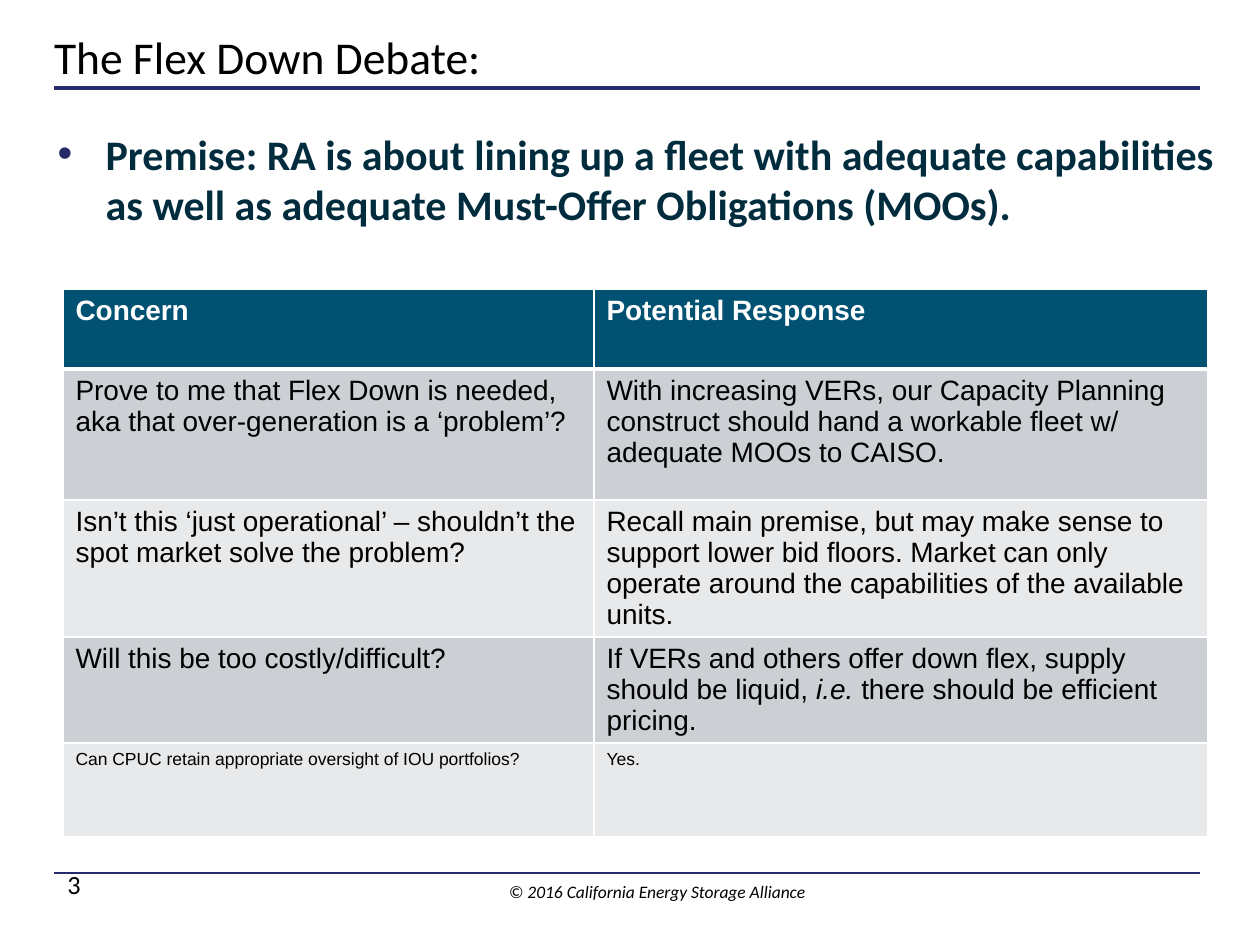
from lxml.etree import SubElement
from pptx import Presentation
from pptx.dml.color import RGBColor
from pptx.enum.shapes import MSO_CONNECTOR
from pptx.enum.text import MSO_ANCHOR, MSO_AUTO_SIZE, PP_ALIGN
from pptx.oxml.ns import qn
from pptx.util import Emu, Pt


def px(length):
    return Emu(round(length * 914400 / 126))


def add_run(paragraph, text, size, font, color, bold=False, italic=False):
    run = paragraph.add_run()
    run.text = text
    run.font.size = Pt(size)
    run.font.name = font
    run.font.bold = bold
    run.font.italic = italic
    run.font.color.rgb = RGBColor.from_string(color)


presentation = Presentation()
presentation.slide_width = px(1260)
presentation.slide_height = px(945)
slide = presentation.slides.add_slide(presentation.slide_layouts[1])

for y, width in [(88, 2.25), (873, 0.75)]:
    rule = slide.shapes.add_connector(MSO_CONNECTOR.STRAIGHT, px(54), px(y), px(1200), px(y))
    rule.line.color.rgb = RGBColor.from_string("252B69")
    rule.line.width = Pt(width)
    SubElement(rule.element.spPr, qn("a:effectLst"))

title = slide.shapes.title
title.left, title.top, title.width, title.height = px(54), px(19), px(1146), px(65)
frame = title.text_frame
frame.auto_size = MSO_AUTO_SIZE.NONE
frame.vertical_anchor = MSO_ANCHOR.BOTTOM
frame.margin_left = frame.margin_top = frame.margin_right = frame.margin_bottom = 0
paragraph = frame.paragraphs[0]
paragraph.alignment = PP_ALIGN.LEFT
paragraph.line_spacing = Pt(21.1)
add_run(paragraph, "The Flex Down Debate:", 26, "Calibri", "000000")

body = slide.placeholders[1]
body.left, body.top, body.width, body.height = px(45), px(122), px(1192), px(117)
body.text_frame.auto_size = MSO_AUTO_SIZE.NONE
paragraph = body.text_frame.paragraphs[0]
paragraph.space_before = Pt(0)
properties = paragraph._p.get_or_add_pPr()
properties.set("marL", str(px(48)))
properties.set("indent", str(-px(48)))
bullet_color = SubElement(properties, qn("a:buClr"))
SubElement(bullet_color, qn("a:srgbClr"), val="252B69")
SubElement(properties, qn("a:buFont"), typeface="Arial")
SubElement(properties, qn("a:buChar"), char="•")
add_run(
    paragraph,
    "Premise: RA is about lining up a fleet with adequate capabilities "
    "as well as adequate Must-Offer Obligations (MOOs).",
    24, "Calibri", "002C3E", bold=True,
)

rows = [
    (80, "005172", "FFFFFF", 16, ["Concern"], ["Potential Response"]),
    (131, "CCD0D5", "000000", 16,
     ["Prove to me that Flex Down is needed, aka that over-generation is a ‘problem’?"],
     ["With increasing VERs, our Capacity Planning construct should hand "
      "a workable fleet w/ adequate MOOs to CAISO."]),
    (126, "E7E9EB", "000000", 16,
     ["Isn’t this ‘just operational’ – shouldn’t the spot market solve the problem?"],
     ["Recall main premise, but may make sense to support lower bid floors. "
      "Market can only operate around the capabilities of the available units."]),
    (101, "CCD0D5", "000000", 16,
     ["Will this be too costly/difficult?"],
     ["If VERs and others offer down flex, supply should be liquid, ",
      "i.e. ", "there should be efficient pricing."]),
    (94, "E7E9EB", "000000", 10,
     ["Can CPUC retain appropriate oversight of IOU portfolios?"], ["Yes."]),
]
height = sum(row[0] for row in rows)
table = slide.shapes.add_table(len(rows), 2, px(63), px(289), px(1145), px(height)).table
for column, width in zip(table.columns, [531, 614]):
    column.width = px(width)
for row_index, (height, fill, color, size, *texts) in enumerate(rows):
    table.rows[row_index].height = px(height)
    for column_index, runs in enumerate(texts):
        cell = table.cell(row_index, column_index)
        paragraph = cell.text_frame.paragraphs[0]
        for text in runs:
            add_run(paragraph, text, size, "Arial", color,
                    bold=row_index == 0, italic=text == "i.e. ")
        cell_properties = cell._tc.get_or_add_tcPr()
        for side in ["L", "R", "T", "B"]:
            header_edge = (row_index, side) in [(0, "B"), (1, "T")]
            border = SubElement(cell_properties, qn(f"a:ln{side}"),
                                w=str(Pt(3 if header_edge else 1)))
            border_fill = SubElement(border, qn("a:solidFill"))
            SubElement(border_fill, qn("a:srgbClr"), val="FFFFFF")
        cell.fill.solid()
        cell.fill.fore_color.rgb = RGBColor.from_string(fill)

copyright_box = slide.shapes.add_textbox(px(509), px(883), px(300), px(19))
frame = copyright_box.text_frame
frame.word_wrap = False
frame.auto_size = MSO_AUTO_SIZE.SHAPE_TO_FIT_TEXT
frame.vertical_anchor = MSO_ANCHOR.BOTTOM
frame.margin_left = frame.margin_top = frame.margin_right = frame.margin_bottom = 0
paragraph = frame.paragraphs[0]
paragraph.line_spacing = 0.9
add_run(paragraph, "© 2016 California Energy Storage Alliance", 10, "Calibri", "000000", italic=True)

number_box = slide.shapes.add_textbox(px(55), px(883), px(62), px(23))
frame = number_box.text_frame
frame.word_wrap = True
frame.auto_size = MSO_AUTO_SIZE.SHAPE_TO_FIT_TEXT
frame.vertical_anchor = MSO_ANCHOR.BOTTOM
add_run(frame.paragraphs[0], "3", 15, "Calibri", "000000")

presentation.save("out.pptx")
